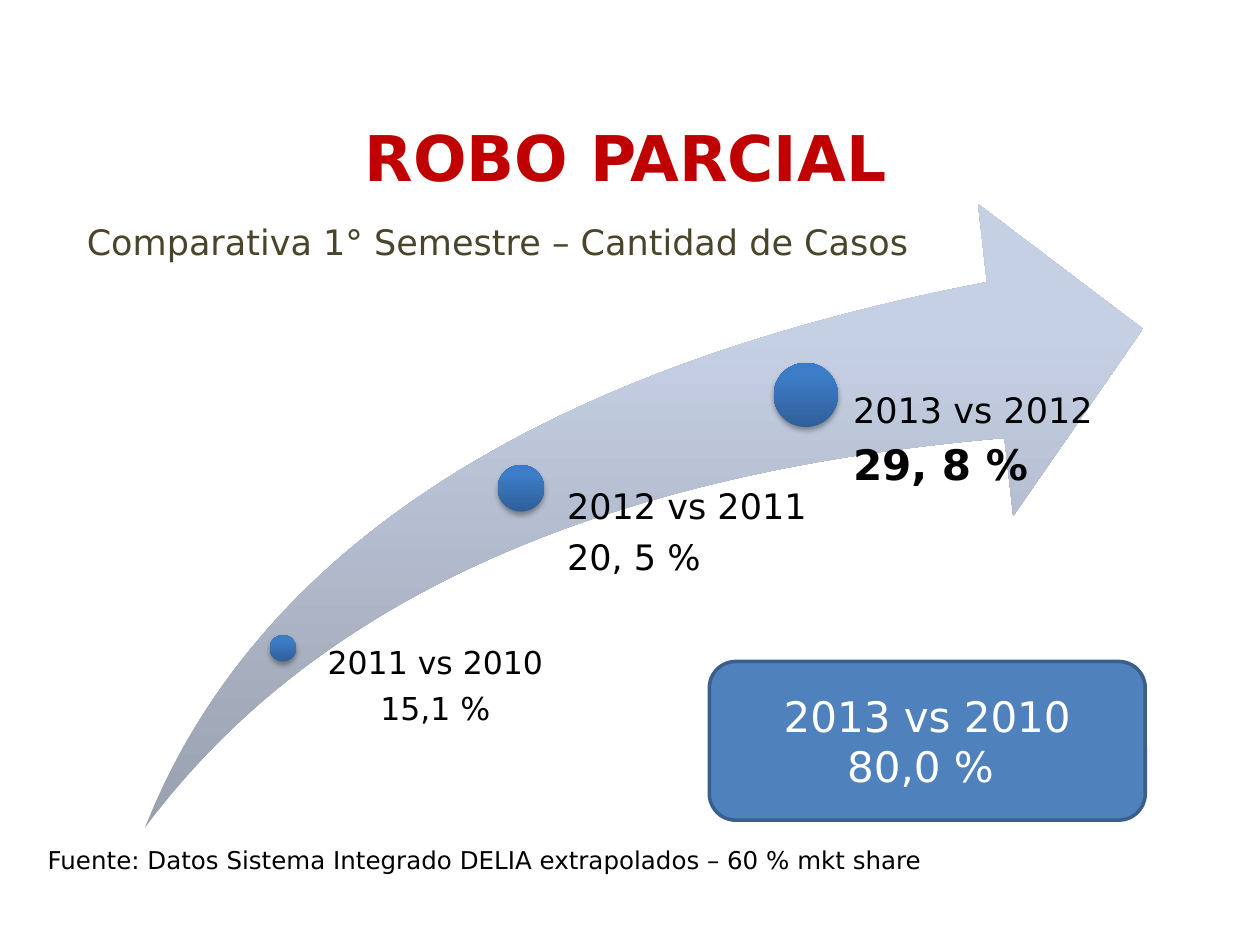
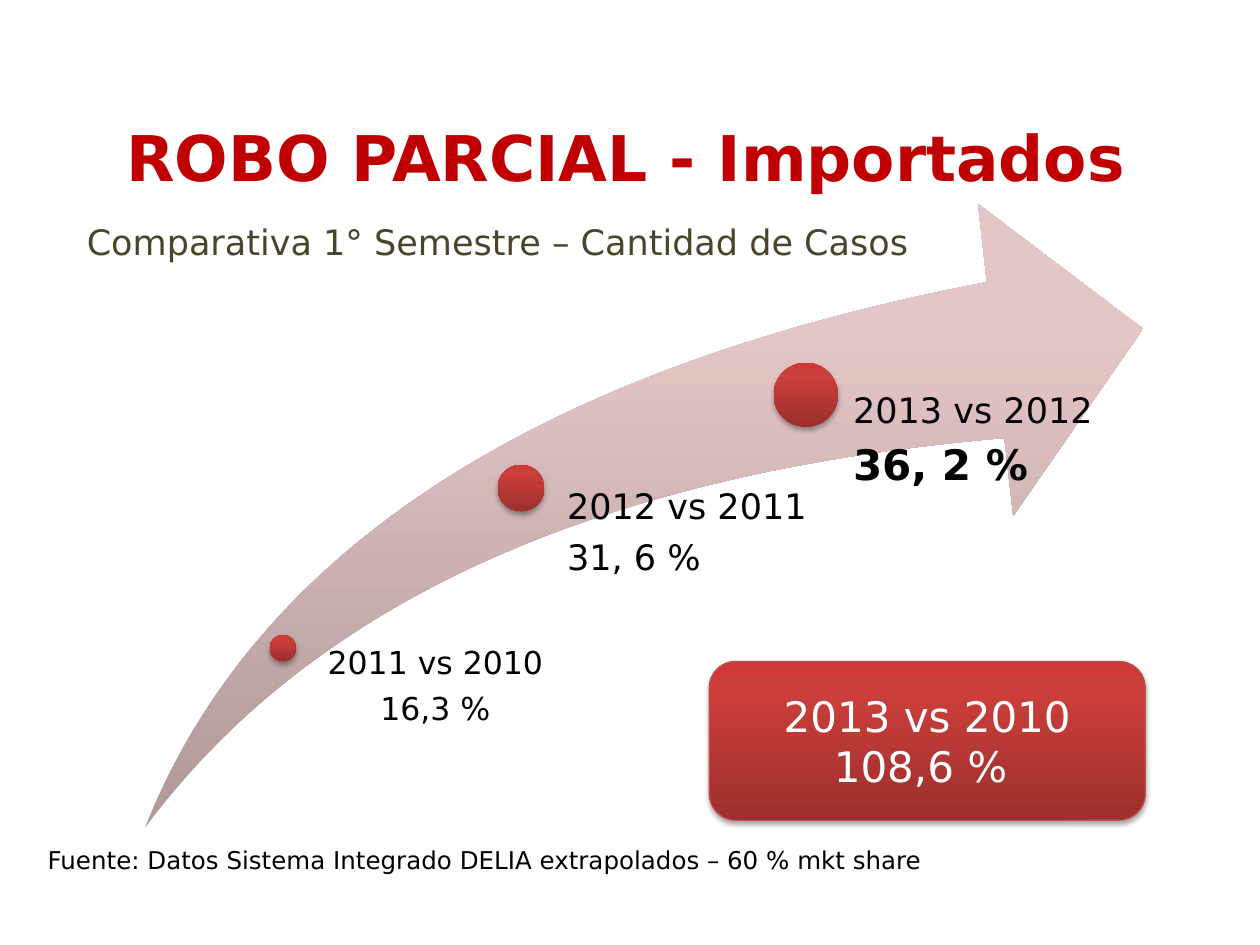
from copy import deepcopy
from dataclasses import dataclass

from lxml.etree import SubElement
from pptx import Presentation
from pptx.dml.color import RGBColor
from pptx.enum.shapes import MSO_SHAPE
from pptx.enum.text import MSO_ANCHOR, MSO_AUTO_SIZE, PP_ALIGN
from pptx.oxml.ns import qn
from pptx.util import Inches, Pt

FONT = "DejaVu Sans"
TITLE_RED = RGBColor(0xC0, 0x00, 0x00)
OLIVE = RGBColor(0x4A, 0x45, 0x2A)
BLACK = RGBColor(0x00, 0x00, 0x00)
WHITE = RGBColor(0xFF, 0xFF, 0xFF)
BOX_BLUE = RGBColor(0x4F, 0x81, 0xBD)
BOX_BLUE_EDGE = RGBColor(0x3A, 0x5F, 0x8C)
BOX_RED_EDGE = RGBColor(0xBF, 0x4C, 0x48)

# Gradient colours from bottom to top
STOP_POSITIONS = (0, 0.8, 1)
BLUE_ARROW = (RGBColor(0x99, 0xA0, 0xAF), RGBColor(0xC6, 0xD0, 0xE4), RGBColor(0xC7, 0xD1, 0xE5))
BLUE_DOT = (RGBColor(0x2F, 0x5F, 0x99), RGBColor(0x3D, 0x7C, 0xC7), RGBColor(0x3A, 0x7C, 0xCB))
RED_ARROW = (RGBColor(0xB0, 0x99, 0x98), RGBColor(0xE5, 0xC6, 0xC6), RGBColor(0xE6, 0xC7, 0xC6))
RED_DOT = (RGBColor(0x9C, 0x2F, 0x2D), RGBColor(0xCB, 0x3E, 0x3A), RGBColor(0xCE, 0x3B, 0x37))

SUBTITLE = "Comparativa 1° Semestre – Cantidad de Casos"
SOURCE = "Fuente: Datos Sistema Integrado DELIA extrapolados – 60 % mkt share"


@dataclass
class Milestone:
    """A dot on the arrow and the place and style of its label."""
    years: str
    dot: tuple  # left, top, diameter
    label: tuple  # left, top, width, height
    inset: float
    size: int = 20
    value_size: int = 20
    bold: bool = False
    align: PP_ALIGN = PP_ALIGN.LEFT


MILESTONES = (
    Milestone("2011 vs 2010", (2.14, 5.04, 0.21), (2.09, 5.14, 2.62, 1.43), 0.11,
              size=18, value_size=18, align=PP_ALIGN.CENTER),
    Milestone("2012 vs 2011", (3.95, 3.69, 0.37), (4.3, 3.88, 2.52, 2.69), 0.2),
    Milestone("2013 vs 2012", (6.14, 2.88, 0.51), (6.5, 3.12, 2.89, 3.44), 0.27,
              value_size=24, bold=True),
)


def paint_gradient(shape, colors):
    shape.fill.gradient()
    stop_list = shape._element.spPr.find(qn("a:gradFill")).find(qn("a:gsLst"))
    stop_list.insert(1, deepcopy(stop_list[0]))
    for stop, position, color in zip(shape.fill.gradient_stops, STOP_POSITIONS, colors):
        stop.position = position
        stop.color.rgb = color
    shape.fill.gradient_angle = 90


def cast_shadow(shape):
    effects = shape._element.spPr.find(qn("a:effectLst"))
    shadow = SubElement(effects, qn("a:outerShdw"), blurRad=str(Pt(3.1)), dist=str(Pt(1.8)),
                        dir="5400000", rotWithShape="0")
    color = SubElement(shadow, qn("a:srgbClr"), val=str(BLACK))
    SubElement(color, qn("a:alpha"), val="35000")


def style_paragraph(para, size, color, bold=False, align=PP_ALIGN.LEFT):
    para.alignment = align
    for span in para.runs:
        span.font.name = FONT
        span.font.size = Pt(size)
        span.font.bold = bold
        span.font.color.rgb = color


class TheftDeck:
    def __init__(self):
        self.deck = Presentation()
        self.deck.slide_width = Inches(10)
        self.deck.slide_height = Inches(7.5)
        self.page = None

    def start_page(self, title):
        self.page = self.deck.slides.add_slide(self.deck.slide_layouts[5])
        box = self.page.shapes.title
        box.left, box.top, box.width, box.height = map(Inches, (0.43, 0.92, 9.07, 0.64))
        frame = box.text_frame
        frame.text = title
        frame.auto_size = MSO_AUTO_SIZE.NONE
        frame.vertical_anchor = MSO_ANCHOR.MIDDLE
        style_paragraph(frame.paragraphs[0], 36, TITLE_RED, True, PP_ALIGN.CENTER)

    def shape(self, kind, place, gradient=None):
        shape = self.page.shapes.add_shape(kind, *map(Inches, place))
        shape.shadow.inherit = False
        shape.line.fill.background()
        if gradient:
            paint_gradient(shape, gradient)
        return shape

    def text_box(self, place, text):
        frame = self.page.shapes.add_textbox(*map(Inches, place)).text_frame
        frame.word_wrap = True
        frame.text = text
        return frame

    def caption(self, place, text, size, color):
        frame = self.text_box(place, text)
        frame.auto_size = MSO_AUTO_SIZE.SHAPE_TO_FIT_TEXT
        style_paragraph(frame.paragraphs[0], size, color)

    def arrow(self, gradient):
        arrow = self.shape(MSO_SHAPE.SWOOSH_ARROW, (1.15, 1.62, 7.92, 4.95), gradient)
        arrow.adjustments[0] = arrow.adjustments[1] = 0.25

    def milestone(self, stone, value, gradient):
        left, top, diameter = stone.dot
        cast_shadow(self.shape(MSO_SHAPE.OVAL, (left, top, diameter, diameter), gradient))
        frame = self.text_box(stone.label, f"{stone.years}\n{value}")
        frame.margin_left = Inches(stone.inset)
        frame.margin_top = frame.margin_right = frame.margin_bottom = 0
        years, change = frame.paragraphs
        style_paragraph(years, stone.size, BLACK, align=stone.align)
        style_paragraph(change, stone.value_size, BLACK, stone.bold, stone.align)
        for para in frame.paragraphs:
            para.line_spacing = 0.9
        years.space_after = Pt(0.38 * stone.size)

    def total_box(self, value, edge, edge_width, fill=None, gradient=None):
        box = self.shape(MSO_SHAPE.ROUNDED_RECTANGLE, (5.63, 5.25, 3.46, 1.26), gradient)
        if gradient:
            cast_shadow(box)
        else:
            box.fill.solid()
            box.fill.fore_color.rgb = fill
        box.line.color.rgb = edge
        box.line.width = Pt(edge_width)
        frame = box.text_frame
        frame.text = f"2013 vs 2010\n{value} "
        frame.vertical_anchor = MSO_ANCHOR.MIDDLE
        for para in frame.paragraphs:
            style_paragraph(para, 24, WHITE, align=PP_ALIGN.CENTER)

    def growth_page(self, title, values, arrow_gradient, dot_gradient, total):
        self.start_page(title)
        self.arrow(arrow_gradient)
        for stone, value in zip(MILESTONES, values):
            self.milestone(stone, value, dot_gradient)
        self.caption((0.59, 1.7, 7.09, 0.44), SUBTITLE, 20, OLIVE)
        self.total_box(**total)
        self.caption((0.28, 6.66, 8.58, 0.34), SOURCE, 14, BLACK)


def main():
    report = TheftDeck()
    report.growth_page(
        "ROBO PARCIAL", ("15,1 %", "20, 5 %", "29, 8 %"), BLUE_ARROW, BLUE_DOT,
        dict(value="80,0 %", edge=BOX_BLUE_EDGE, edge_width=2, fill=BOX_BLUE))
    report.growth_page(
        "ROBO PARCIAL - Importados", ("16,3 %", "31, 6 %", "36, 2 %"), RED_ARROW, RED_DOT,
        dict(value="108,6 %", edge=BOX_RED_EDGE, edge_width=0.75, gradient=RED_DOT))
    report.deck.save("out.pptx")


if __name__ == "__main__":
    main()
